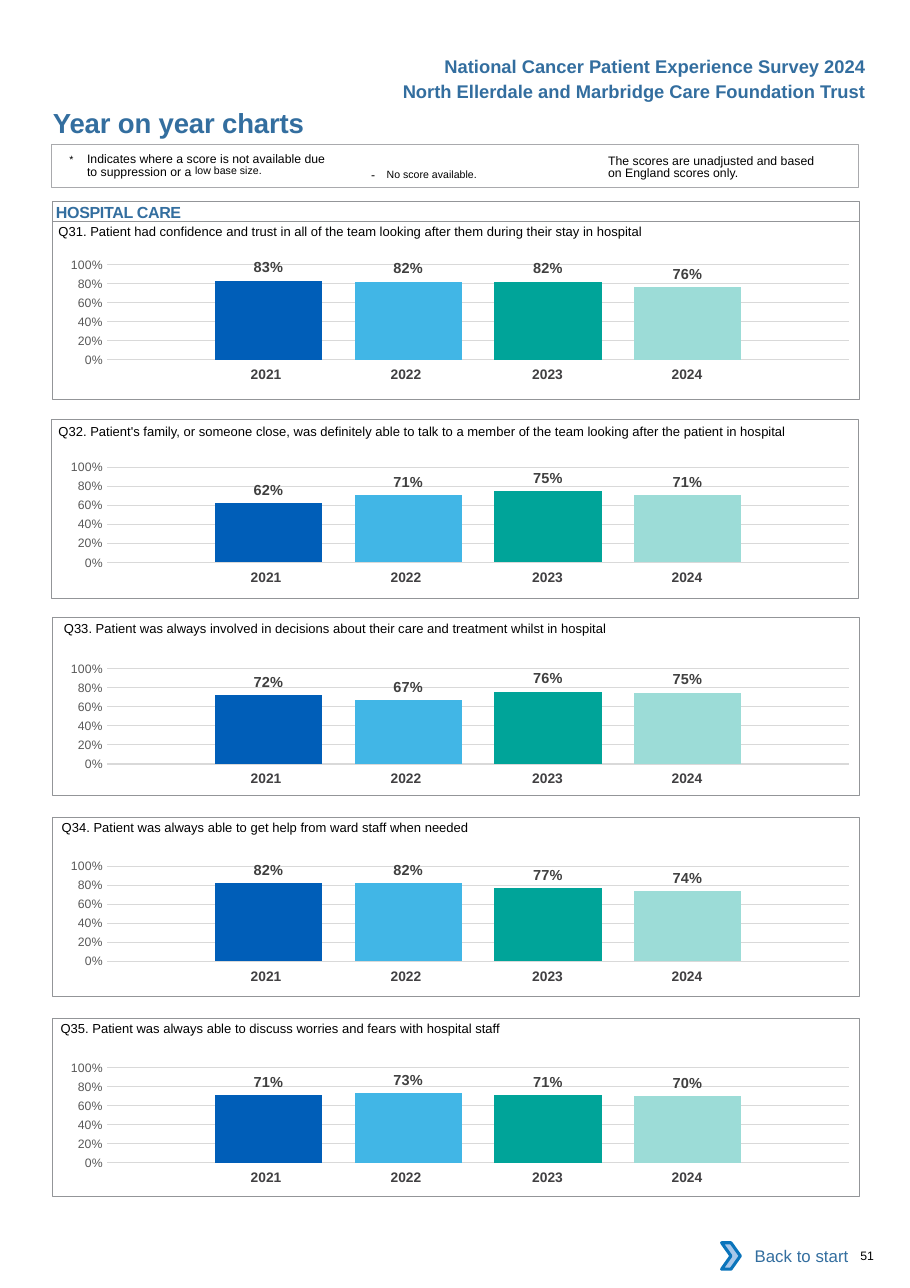
from dataclasses import dataclass

from lxml import etree
from pptx import Presentation
from pptx.chart.data import CategoryChartData
from pptx.dml.color import RGBColor
from pptx.enum.chart import XL_CHART_TYPE, XL_LABEL_POSITION, XL_TICK_MARK
from pptx.enum.shapes import MSO_SHAPE
from pptx.enum.text import MSO_ANCHOR, PP_ALIGN
from pptx.oxml import parse_xml
from pptx.oxml.ns import nsdecls, qn
from pptx.util import Emu, Inches, Pt

LEFT, CENTER, RIGHT = PP_ALIGN.LEFT, PP_ALIGN.CENTER, PP_ALIGN.RIGHT
TOP, MIDDLE = MSO_ANCHOR.TOP, MSO_ANCHOR.MIDDLE
RECTANGLE, CHEVRON = MSO_SHAPE.RECTANGLE, MSO_SHAPE.CHEVRON
COLUMNS = XL_CHART_TYPE.COLUMN_CLUSTERED
OUTSIDE_END = XL_LABEL_POSITION.OUTSIDE_END
NO_TICKS = XL_TICK_MARK.NONE

WIDTH, HEIGHT = Inches(8.26), Inches(11.69)
BLUE, BLACK, GRAY = "336E9F", "000000", "939598"
YEAR_COLORS = {"2021": "005EB8", "2022": "41B6E6", "2023": "00A499", "2024": "9CDCD7"}
YEAR_WIDTHS = (15.38, 15.38, 16.22, 15.38)
YEAR_RIGHT_INSETS = (0, 0, 2.9, 8.6)
PLOT_AREA = {"x": 0.08, "y": 0.14, "w": 0.92, "h": 0.67}
NO_TABLE_STYLE = "{2D5ABB26-0587-4C30-8999-92F81FD0307C}"


@dataclass(frozen=True)
class Place:
    """Left, top, width and height in percent of the slide."""
    left: float
    top: float
    width: float
    height: float

    def lengths(self) -> tuple[Emu, Emu, Emu, Emu]:
        return across(self.left), down(self.top), across(self.width), down(self.height)


@dataclass(frozen=True)
class Span:
    text: str
    size: float = 8
    baseline: int = 0
    spacing: float = 0


@dataclass(frozen=True)
class Panel:
    question: str
    scores: tuple[float, ...]
    left: float
    top: float
    text_left: float
    text_top: float
    chart_top: float


PANELS = (
    Panel("Q31. Patient had confidence and trust in all of the team looking after them during their stay in hospital",
          (0.83, 0.82, 0.82, 0.76), 5.81, 17.19, 6.42, 16.6, 18.99),
    Panel("Q32. Patient's family, or someone close, was definitely able to talk to a member of the team "
          "looking after the patient in hospital",
          (0.62, 0.71, 0.75, 0.71), 5.69, 32.59, 6.42, 32.08, 34.73),
    Panel("Q33. Patient was always involved in decisions about their care and treatment whilst in hospital",
          (0.72, 0.67, 0.76, 0.75), 5.81, 47.9, 7.02, 47.39, 50.38),
    Panel("Q34. Patient was always able to get help from ward staff when needed",
          (0.82, 0.82, 0.77, 0.74), 5.81, 63.47, 6.78, 62.87, 65.7),
    Panel("Q35. Patient was always able to discuss worries and fears with hospital staff",
          (0.71, 0.73, 0.71, 0.7), 5.81, 79.04, 6.66, 78.44, 81.35),
)


def across(share: float) -> Emu:
    return Emu(round(WIDTH * share / 100))


def down(share: float) -> Emu:
    return Emu(round(HEIGHT * share / 100))


def color(value: str) -> RGBColor:
    return RGBColor.from_string(value)


def set_font(font, size: float, tint: str, bold: bool = False, name: str = "Arial") -> None:
    font.name, font.size, font.bold = name, Pt(size), bold
    font.color.rgb = color(tint)


def write(frame, text: str | list[Span], *, size: float = 8, tint: str = BLACK, bold: bool = False,
          align=LEFT, anchor=TOP, insets: tuple = (0, 0, 0, 0), line: float | None = None,
          hanging: float = 0, spacing: float = 0) -> None:
    """Fill a text frame; insets are left, top, right and bottom in points."""
    frame.word_wrap, frame.vertical_anchor = True, anchor
    frame.margin_left, frame.margin_top, frame.margin_right, frame.margin_bottom = map(Pt, insets)
    para = frame.paragraphs[0]
    para.alignment = align
    if line:
        para.line_spacing = Pt(line)
    if hanging:
        properties = para._p.get_or_add_pPr()
        properties.set("marL", str(Pt(hanging)))
        properties.set("indent", str(-Pt(hanging)))
    for span in [Span(text, size, 0, spacing)] if isinstance(text, str) else text:
        run = para.add_run()
        run.text = span.text
        set_font(run.font, span.size, tint, bold)
        if span.baseline:
            run._r.get_or_add_rPr().set("baseline", str(span.baseline * 1000))
        if span.spacing:
            run._r.get_or_add_rPr().set("spc", str(round(span.spacing * 100)))


def add_text(page, place: Place, text: str | list[Span], **style) -> None:
    write(page.shapes.add_textbox(*place.lengths()).text_frame, text, **style)


def add_box(page, place: Place, kind=RECTANGLE, fill: str | None = None,
            line: str | None = GRAY, weight: float = 0.5):
    box = page.shapes.add_shape(kind, *place.lengths())
    box.shadow.inherit = False
    if fill:
        box.fill.solid()
        box.fill.fore_color.rgb = color(fill)
    else:
        box.fill.background()
    if line:
        box.line.color.rgb = color(line)
        box.line.width = Pt(weight)
    else:
        box.line.fill.background()
    return box


def add_years(page, top: float) -> None:
    place = Place(20.94, top, sum(YEAR_WIDTHS), 2.31)
    table = page.shapes.add_table(1, len(YEAR_COLORS), *place.lengths()).table
    table.first_row = table.horz_banding = False
    table._tbl.tblPr.find(qn("a:tableStyleId")).text = NO_TABLE_STYLE
    for index, year in enumerate(YEAR_COLORS):
        table.columns[index].width = across(YEAR_WIDTHS[index])
        cell = table.cell(0, index)
        cell.fill.background()
        write(cell.text_frame, year, size=9, tint="414042", bold=True, align=CENTER)
        cell.margin_left, cell.margin_right = Pt(7.2), Pt(YEAR_RIGHT_INSETS[index])
        cell.margin_top = cell.margin_bottom = Pt(3.6)


def add_scores(page, top: float, scores: tuple[float, ...]) -> None:
    data = CategoryChartData(number_format="0%")
    data.categories = ["1"]
    for number, score in enumerate(scores, 1):
        data.add_series(f"Series {number}", [score])
    chart = page.shapes.add_chart(COLUMNS, *Place(4.72, top, 88.62, 11.04).lengths(), data).chart
    chart.has_legend = chart.has_title = False
    set_font(chart.font, 10, BLACK, name="Calibri")
    chart.category_axis.visible = False

    # Percentage axis
    axis = chart.value_axis
    axis.minimum_scale, axis.maximum_scale, axis.major_unit = 0, 1, 0.2
    axis.major_tick_mark = axis.minor_tick_mark = NO_TICKS
    axis.format.line.fill.background()
    axis.major_gridlines.format.line.color.rgb = color("D9D9D9")
    axis.major_gridlines.format.line.width = Pt(0.75)
    axis.tick_labels.number_format, axis.tick_labels.number_format_is_linked = "0%", False
    set_font(axis.tick_labels.font, 8, "595959")

    # Bars and their labels
    plot = chart.plots[0]
    plot.gap_width, plot.overlap, plot.vary_by_categories = 200, -30, False
    for series, tint in zip(plot.series, YEAR_COLORS.values()):
        series.format.fill.solid()
        series.format.fill.fore_color.rgb = color(tint)
        labels = series.data_labels
        labels.show_value, labels.position = True, OUTSIDE_END
        labels.number_format, labels.number_format_is_linked = "0%", False
        set_font(labels.font, 9.5, "404040", True)

    # Fixed plot area and clear background
    area = chart._chartSpace.chart.plotArea
    for old in area.findall(qn("c:layout")):
        area.remove(old)
    layout = etree.Element(qn("c:layout"))
    manual = etree.SubElement(layout, qn("c:manualLayout"))
    settings = {"layoutTarget": "inner", "xMode": "edge", "yMode": "edge", **PLOT_AREA}
    for name, value in settings.items():
        etree.SubElement(manual, qn(f"c:{name}")).set("val", str(value))
    area.insert(0, layout)
    chart._chartSpace.chart.addnext(parse_xml(
        f'<c:spPr {nsdecls("c", "a")}><a:noFill/><a:ln><a:noFill/></a:ln></c:spPr>'))


def main() -> None:
    deck = Presentation()
    deck.slide_width, deck.slide_height = WIDTH, HEIGHT
    page = deck.slides.add_slide(deck.slide_layouts[6])

    # Headings
    heading = {"size": 12, "tint": BLUE, "bold": True, "align": RIGHT}
    add_text(page, Place(34.6, 4.3, 60.56, 1.7), "National Cancer Patient Experience Survey 2024", **heading)
    add_text(page, Place(34.6, 6.24, 60.56, 1.7), "North Ellerdale and Marbridge Care Foundation Trust", **heading)
    add_text(page, Place(5.81, 8.22, 54.4, 2.57), "Year on year charts", size=18, tint=BLUE, bold=True, spacing=-0.1)

    # Notes on the scores
    add_box(page, Place(5.69, 11.21, 88.62, 3.34), line="A9AAAD", weight=0.75)
    add_text(page, Place(7.63, 11.8, 29.06, 2.3),
             [Span("*\t", 12, 3), Span("Indicates where a score is not available due to suppression or a "),
              Span("low base size.", 12, 7)], line=8.1, hanging=11.5, insets=(0, 2, 0, 0))
    add_text(page, Place(39.59, 12.06, 22.15, 2.05),
             [Span("- ", spacing=2.6), Span("No score available.", 12, 3)], insets=(7.2, 3.6, 7.2, 3.6))
    add_text(page, Place(66.83, 11.8, 23.85, 2.3),
             "The scores are unadjusted and based on England scores only.", line=8.1, insets=(0, 2, 0, 0))

    # Section and its question panels
    section = add_box(page, Place(5.81, 15.65, 88.62, 1.54))
    write(section.text_frame, "HOSPITAL CARE", size=10.5, tint=BLUE, bold=True, insets=(2, 0.7, 0, 0), spacing=-0.2)
    for panel in PANELS:
        add_years(page, panel.chart_top + 9.07)
        add_scores(page, panel.chart_top, panel.scores)
        add_box(page, Place(panel.left, panel.top, 88.62, 13.86))
        add_text(page, Place(panel.text_left, panel.text_top, 87, 2.05), panel.question,
                 size=8.5, insets=(0, 6.5, 0, 0))

    # Footer
    back = add_box(page, Place(80.15, 95.72, 14.29, 3.59), fill="FFFFFF", line=None)
    write(back.text_frame, "Back to start", size=11, tint=BLUE, align=RIGHT, anchor=MIDDLE,
          insets=(7.2, 3.6, 7.2, 3.6))
    add_box(page, Place(79.3, 96.49, 2.06, 2.05), CHEVRON, "A8C7E9", "0A74BB", 2)
    add_text(page, Place(94.55, 96.92, 5, 1.11), "51")
    deck.save("out.pptx")


if __name__ == "__main__":
    main()
